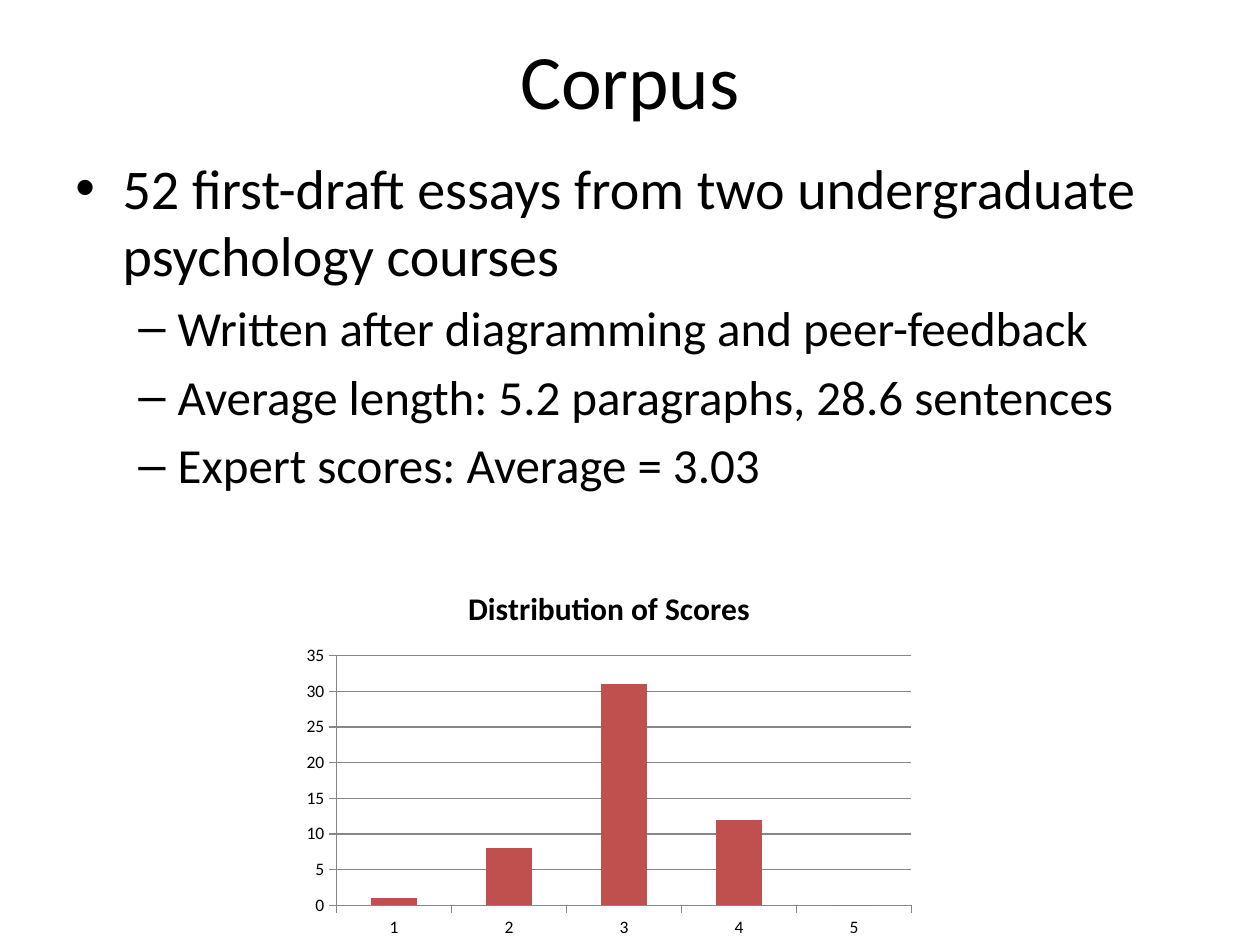
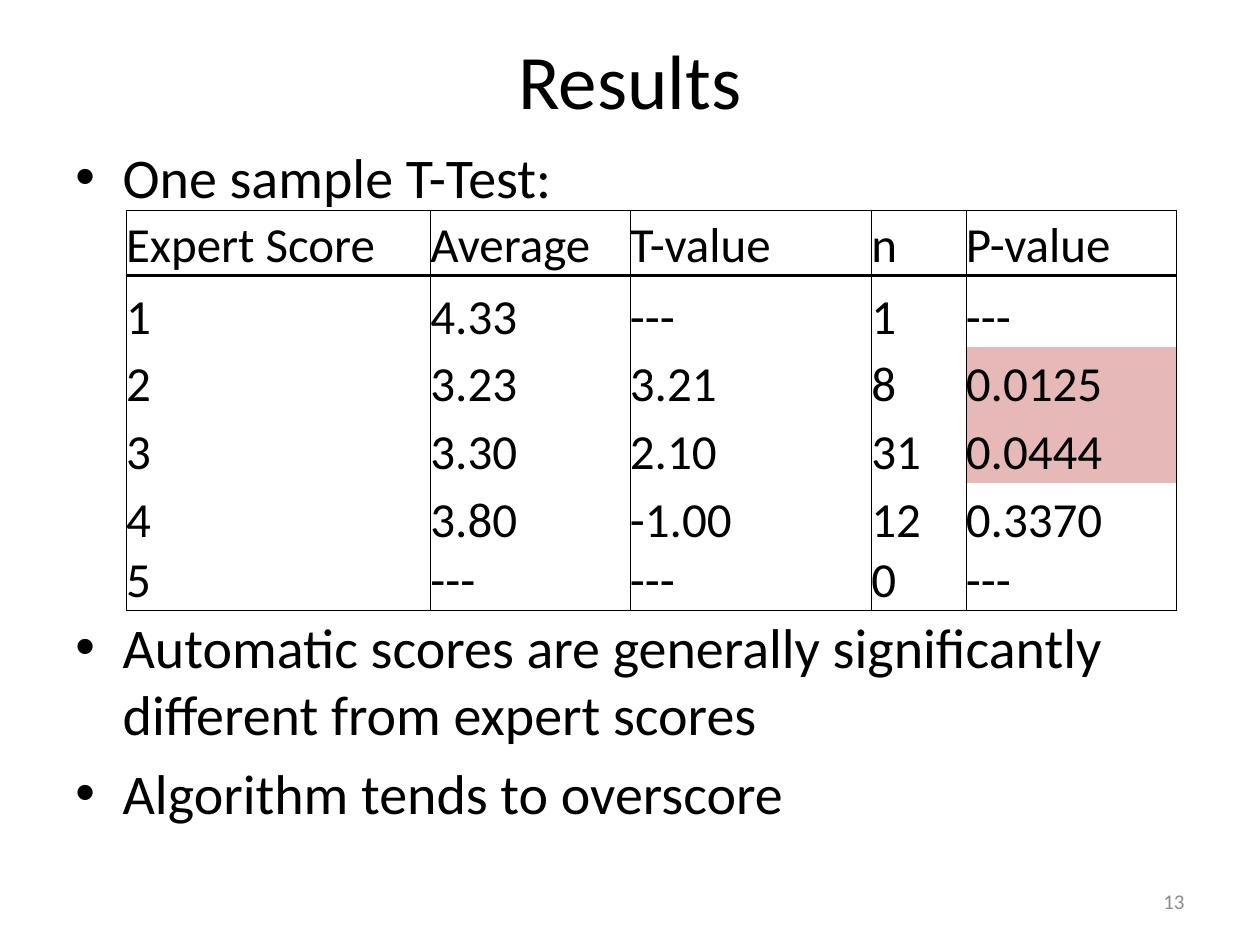
from lxml.etree import SubElement
from pptx import Presentation
from pptx.chart.data import CategoryChartData
from pptx.dml.color import RGBColor
from pptx.enum.chart import XL_CHART_TYPE, XL_TICK_MARK
from pptx.enum.text import MSO_ANCHOR, PP_ALIGN
from pptx.oxml.ns import qn
from pptx.util import Pt

HUES = {"ink": "000000", "page": "FFFFFF", "mark": "E6B9B8",
        "bar": "C0504D", "grid": "868686", "note": "8C8C8C"}
FACE = "Calibri"

# Text styles: size, hue, paragraph format, bullet (sign, left, hang)
STYLES = {
    "title": (44, "ink", {"alignment": PP_ALIGN.CENTER}, None),
    "main": (32, "ink", {"space_before": Pt(6.4)}, ("•", 27, 27)),
    "sub": (28, "ink", {"space_before": Pt(5.6)}, ("–", 58.5, 22.5)),
    "cell": (28, "ink", {"alignment": PP_ALIGN.LEFT}, None),
    "page": (12, "note", {"alignment": PP_ALIGN.RIGHT}, None),
}


def hue(name):
    return RGBColor.from_string(HUES[name])


def put(item, values):
    for key, value in values.items():
        setattr(item, key, value)


class Deck:
    def __init__(self, wide, high):
        self.show = Presentation()
        put(self.show, {"slide_width": Pt(wide), "slide_height": Pt(high)})
        self.slide = None

    def page(self, title):
        self.slide = self.show.slides.add_slide(self.show.slide_layouts[6])
        self.text((36, 0, 648, 90), [(title, "title")], MSO_ANCHOR.MIDDLE)

    def style(self, para, text, name):
        size, tone, form, sign = STYLES[name]
        run = para.add_run()
        run.text = text
        put(run.font, {"size": Pt(size), "name": FACE})
        run.font.color.rgb = hue(tone)
        put(para, form)
        if sign:
            mark, left, hang = sign
            props = para._p.get_or_add_pPr()
            props.set("marL", str(Pt(left)))
            props.set("indent", str(-Pt(hang)))
            SubElement(props, qn("a:buFont")).set("typeface", "Arial")
            SubElement(props, qn("a:buChar")).set("char", mark)

    def text(self, box, lines, anchor=MSO_ANCHOR.TOP):
        """Each line is (text, style) or (text, style, space before)."""
        frame = self.slide.shapes.add_textbox(*map(Pt, box)).text_frame
        put(frame, {"word_wrap": True, "vertical_anchor": anchor})
        for spot, (text, name, *gap) in enumerate(lines):
            para = frame.add_paragraph() if spot else frame.paragraphs[0]
            self.style(para, text, name)
            if gap:
                para.space_before = Pt(gap[0])

    def edge(self, cell, widths):
        props = cell._tc.get_or_add_tcPr()
        for spot, (side, width) in enumerate(zip("LRTB", widths)):
            line = props.makeelement(qn(f"a:ln{side}"), {"w": str(Pt(width))})
            props.insert(spot, line)
            if width:
                fill = SubElement(line, qn("a:solidFill"))
                SubElement(fill, qn("a:srgbClr")).set("val", HUES["ink"])
            else:
                SubElement(line, qn("a:noFill"))

    def table(self, spot, cols, highs, rows, marks):
        box = (*spot, sum(cols), sum(highs))
        grid = self.slide.shapes.add_table(
            len(rows), len(cols), *map(Pt, box)).table
        put(grid, {"first_row": False, "horz_banding": False})
        for col, width in zip(grid.columns, cols):
            col.width = Pt(width)
        for row, high in zip(grid.rows, highs):
            row.height = Pt(high)
        # Rules: box around, thick line below the head, none between rows
        rules = [0.5, 2] + [0] * (len(rows) - 2) + [0.5]
        pad = {f"margin_{side}": 0
               for side in ("left", "right", "top", "bottom")}
        for y, row in enumerate(rows):
            for x, text in enumerate(row):
                cell = grid.cell(y, x)
                put(cell, {**pad, "vertical_anchor": MSO_ANCHOR.BOTTOM})
                self.style(cell.text_frame.paragraphs[0], text, "cell")
                cell.fill.solid()
                cell.fill.fore_color.rgb = hue(
                    "mark" if (y, x) in marks else "page")
                self.edge(cell, (0.5, 0.5, rules[y], rules[y + 1]))

    def chart(self, box, title, names, values):
        data = CategoryChartData()
        data.categories = names
        data.add_series("Series 1", values)
        chart = self.slide.shapes.add_chart(
            XL_CHART_TYPE.COLUMN_CLUSTERED, *map(Pt, box), data).chart
        put(chart, {"has_legend": False, "has_title": True})
        put(chart.font, {"size": Pt(10), "name": FACE})
        chart.font.color.rgb = hue("ink")
        # Title
        frame = chart.chart_title.text_frame
        frame.text = title
        font = frame.paragraphs[0].runs[0].font
        put(font, {"size": Pt(18), "bold": True, "name": FACE})
        font.color.rgb = hue("ink")
        # Bars
        plot = chart.plots[0]
        put(plot, {"gap_width": 150, "vary_by_categories": False})
        fill = plot.series[0].format.fill
        fill.solid()
        fill.fore_color.rgb = hue("bar")
        # Axes
        put(chart.value_axis, {"minimum_scale": 0, "maximum_scale": 35,
                               "major_unit": 5, "has_major_gridlines": True})
        for axis in (chart.category_axis, chart.value_axis):
            axis.major_tick_mark = XL_TICK_MARK.OUTSIDE
        for part in (chart.category_axis, chart.value_axis,
                     chart.value_axis.major_gridlines):
            part.format.line.width = Pt(0.75)
            part.format.line.color.rgb = hue("grid")


def main():
    deck = Deck(720, 540)

    # Corpus: facts and score chart
    deck.page("Corpus")
    deck.text((36, 84, 648, 356), [
        ("52 first-draft essays from two undergraduate psychology courses",
         "main"),
        ("Written after diagramming and peer-feedback", "sub"),
        ("Average length: 5.2 paragraphs, 28.6 sentences", "sub"),
        ("Expert scores: Average = 3.03", "sub"),
    ])
    deck.chart((168, 324, 360, 216), "Distribution of Scores",
               ["1", "2", "3", "4", "5"], (1, 8, 31, 12, 0))

    # Results: findings around the test table
    deck.page("Results")
    deck.text((36, 78, 648, 450), [
        ("One sample T-Test:", "main"),
        ("Automatic scores are generally significantly different "
         "from expert scores", "main", 230),
        ("Algorithm tends to overscore", "main"),
    ])
    deck.text((516, 500.5, 168, 28.75), [("13", "page")], MSO_ANCHOR.MIDDLE)
    deck.table((72, 120), (174, 114, 138, 54, 120),
               (37.5, 41, 38.75, 38.75, 38.75, 34), [
        ("Expert Score", "Average", "T-value", "n", "P-value"),
        ("1", "4.33", "---", "1", "---"),
        ("2", "3.23", "3.21", "8", "0.0125"),
        ("3", "3.30", "2.10", "31", "0.0444"),
        ("4", "3.80", "-1.00", "12", "0.3370"),
        ("5", "---", "---", "0", "---"),
    ], {(2, 4), (3, 4)})

    deck.show.save("out.pptx")


if __name__ == "__main__":
    main()
